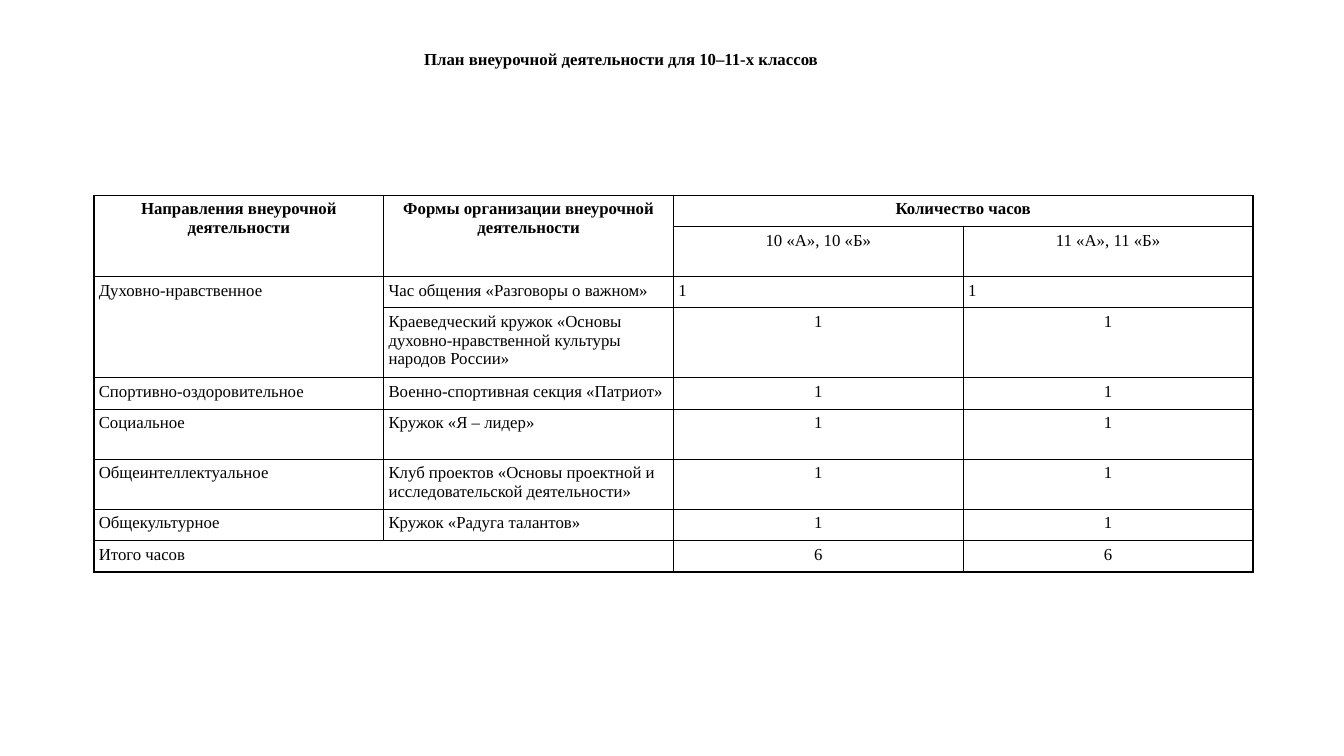
from lxml.etree import SubElement as Sub
from pptx import Presentation
from pptx.dml.color import RGBColor
from pptx.enum.text import MSO_ANCHOR as Anchor, PP_ALIGN as Align
from pptx.oxml.ns import qn
from pptx.util import Cm, Pt

INK = "000000"
HEADS = ["Направления внеурочной деятельности",
         "Формы организации внеурочной деятельности",
         "Количество часов", ""]
GROUPS = ["", "", "10 «А», 10 «Б»", "11 «А», 11 «Б»"]
PLAN = [
    ("Духовно-нравственное", "Час общения «Разговоры о важном»"),
    ("", "Краеведческий кружок «Основы духовно-нравственной культуры народов России»"),
    ("Спортивно-оздоровительное", "Военно-спортивная секция «Патриот»"),
    ("Социальное", "Кружок «Я – лидер»"),
    ("Общеинтеллектуальное",
     "Клуб проектов «Основы проектной и исследовательской деятельности»"),
    ("Общекультурное", "Кружок «Радуга талантов»"),
]
ROWS = [HEADS, GROUPS, *([*line, "1", "1"] for line in PLAN),
        ["Итого часов", "", "6", "6"]]
HEIGHTS = [0.79, 1.2, 0.79, 1.73, 0.79, 1.26, 1.26, 0.79, 0.79]
# Merged areas: first row, first column, last row, last column
SPANS = [(0, 0, 1, 0), (0, 1, 1, 1), (0, 2, 0, 3), (2, 0, 3, 0), (8, 0, 8, 1)]


def color(code):
    return RGBColor.from_string(code)


class Page:
    font = "Times New Roman"
    size = 12

    def __init__(self, deck):
        self.slide = deck.slides.add_slide(deck.slide_layouts[6])

    def label(self, frame, text, bold=False, align=Align.LEFT):
        para = frame.paragraphs[0]
        para.alignment = align
        run = para.add_run()
        run.text = text
        run.font.name = self.font
        run.font.size = Pt(self.size)
        run.font.bold = bold
        run.font.color.rgb = color(INK)

    def title(self, text, left, top, width, height):
        box = self.slide.shapes.add_textbox(Cm(left), Cm(top), Cm(width), Cm(height))
        frame = box.text_frame
        frame.word_wrap = True
        frame.vertical_anchor = Anchor.TOP
        frame.margin_top = Cm(0.18)
        self.label(frame, text, bold=True)

    def border(self, cell):
        props = cell._tc.get_or_add_tcPr()
        for side in ("lnL", "lnR", "lnT", "lnB"):
            line = Sub(props, qn(f"a:{side}"), w=str(Pt(1)))
            fill = Sub(line, qn("a:solidFill"))
            Sub(fill, qn("a:srgbClr"), val=INK)

    def table(self, rows, heights, spans, left, top, width):
        shape = self.slide.shapes.add_table(
            len(rows), len(rows[0]), Cm(left), Cm(top), Cm(width), Cm(sum(heights)))
        grid = shape.table
        grid.first_row = grid.horz_banding = False
        for row, height in zip(grid.rows, heights):
            row.height = Cm(height)
        for col in grid.columns:
            col.width = Cm(width / len(rows[0]))
        for r, texts in enumerate(rows):
            for c, text in enumerate(texts):
                cell = grid.cell(r, c)
                self.border(cell)
                cell.fill.background()
                cell.margin_left = cell.margin_right = Cm(0.12)
                cell.margin_top = cell.margin_bottom = Cm(0.12)
                # Headings and hours are centred, except in the first plan row
                mid = r < 2 or (c > 1 and r != 2)
                if text:
                    self.label(cell.text_frame, text, bold=r == 0,
                               align=Align.CENTER if mid else Align.LEFT)
        for r, c, last, end in spans:
            grid.cell(r, c).merge(grid.cell(last, end))


def main():
    deck = Presentation()
    deck.slide_width, deck.slide_height = Cm(33.87), Cm(19.05)
    page = Page(deck)

    # Heading
    page.title("План внеурочной деятельности для 10–11-х классов",
               10.44, 1.04, 12.22, 1.55)

    # Plan of hours
    page.table(ROWS, HEIGHTS, SPANS, 2.37, 4.92, 29.21)

    deck.save("out.pptx")


if __name__ == "__main__":
    main()
